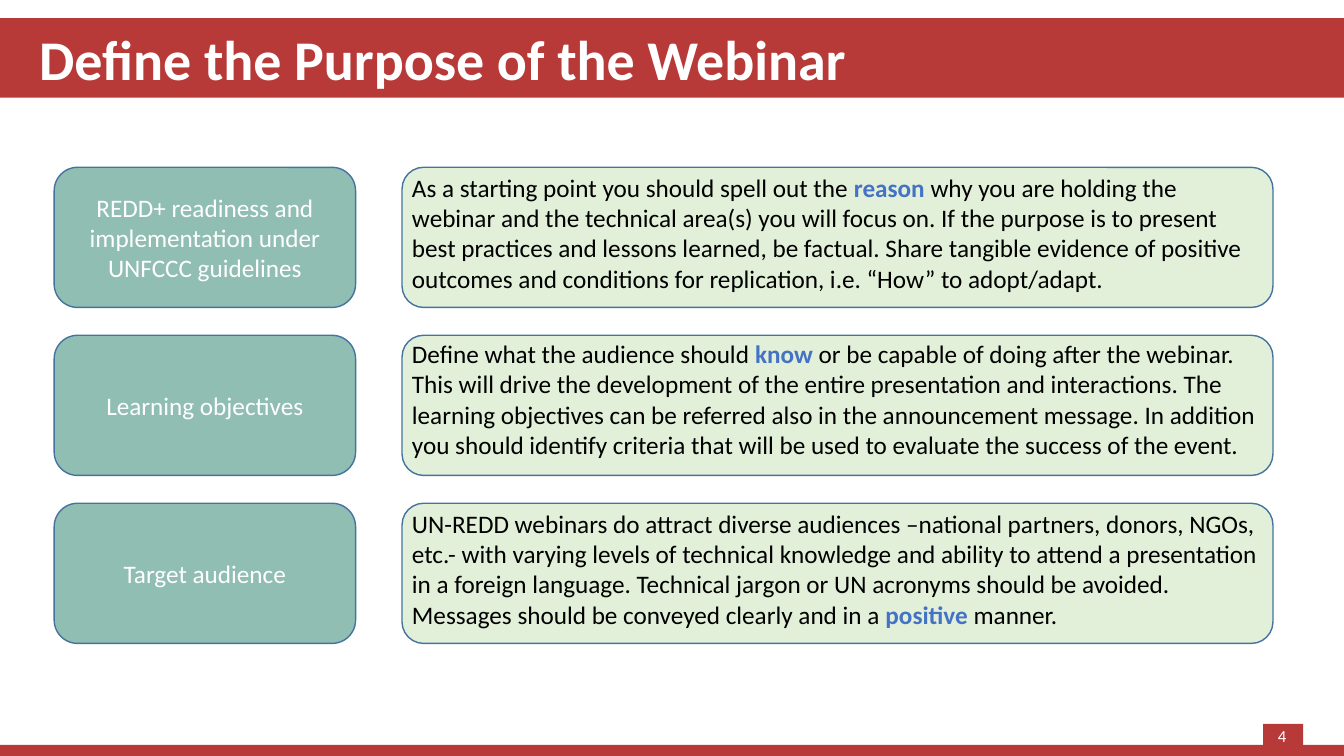
from pptx import Presentation
from pptx.dml.color import RGBColor
from pptx.enum import shapes, text
from pptx.util import Pt

COLORS = {
    "banner": "B83A38",
    "topic": "90BEB2",
    "detail": "E2F0D9",
    "outline": "43739E",
    "keyword": "4472C4",
    "light": "FFFFFF",
    "dark": "000000",
}
FONT = "Calibri"
SLIDE_W, SLIDE_H = 960, 540
ROW_TOP, ROW_PITCH, ROW_H = 119.5, 120, 100.1
TOPIC_LEFT, TOPIC_W = 38.7, 215.3
DETAIL_LEFT, DETAIL_W = 287.2, 622.1

# Topic, text top offset, then text before the keyword, the keyword, text after it
ROWS = [
    ("REDD+ readiness and implementation under UNFCCC guidelines", 0,
     "As a starting point you should spell out the ", "reason ",
     "why you are holding the webinar and the technical area(s) you will focus on. "
     "If the purpose is to present best practices and lessons learned, be factual. "
     "Share tangible evidence of positive outcomes and conditions for replication, "
     "i.e. “How” to adopt/adapt."),
    ("Learning objectives", -1.2,
     "Define what the audience should ", "know ",
     "or be capable of doing after the webinar. This will drive the development of "
     "the entire presentation and interactions. The learning objectives can be "
     "referred also in the announcement message. In addition you should identify "
     "criteria that will be used to evaluate the success of the event."),
    ("Target audience", 0,
     "UN-REDD webinars do attract diverse audiences –national partners, donors, NGOs, "
     "etc.- with varying levels of technical knowledge and ability to attend a "
     "presentation in a foreign language. Technical jargon or UN acronyms should be "
     "avoided. Messages should be conveyed clearly and in a ", "positive", " manner."),
]


def rgb(name):
    return RGBColor.from_string(COLORS[name])


def paint(shape, name):
    shape.fill.solid()
    shape.fill.fore_color.rgb = rgb(name)


def style(paragraph, size, color, align, bold=False):
    font = paragraph.font
    font.name, font.size, font.bold = FONT, Pt(size), bold
    font.color.rgb = rgb(color)
    paragraph.alignment = align


def add_title(slide, wording):
    title = slide.shapes.title
    title.left, title.top, title.width, title.height = Pt(0), Pt(13), Pt(SLIDE_W), Pt(56.7)
    paint(title, "banner")
    frame = title.text_frame
    frame.text = wording
    frame.auto_size = text.MSO_AUTO_SIZE.NONE
    frame.vertical_anchor = text.MSO_ANCHOR.MIDDLE
    frame.margin_left = Pt(28)
    frame.margin_top = frame.margin_right = frame.margin_bottom = 0
    style(frame.paragraphs[0], 40, "light", text.PP_ALIGN.LEFT, bold=True)


def add_bar(slide, left, top, width, height):
    bar = slide.shapes.add_shape(
        shapes.MSO_SHAPE.RECTANGLE, Pt(left), Pt(top), Pt(width), Pt(height))
    bar.shadow.inherit = False
    paint(bar, "banner")
    bar.line.fill.background()


def add_card(slide, left, top, width, color, rounding):
    card = slide.shapes.add_shape(
        shapes.MSO_SHAPE.ROUNDED_RECTANGLE, Pt(left), Pt(top), Pt(width), Pt(ROW_H))
    card.adjustments[0] = rounding
    card.shadow.inherit = False
    paint(card, color)
    card.line.color.rgb = rgb("outline")
    card.line.width = Pt(1)
    return card


def add_topic(slide, top, wording):
    frame = add_card(slide, TOPIC_LEFT, top, TOPIC_W, "topic", 0.167).text_frame
    frame.text = wording
    frame.word_wrap = True
    frame.vertical_anchor = text.MSO_ANCHOR.MIDDLE
    style(frame.paragraphs[0], 18, "light", text.PP_ALIGN.CENTER)


def add_text(slide, left, top, width, height):
    frame = slide.shapes.add_textbox(Pt(left), Pt(top), Pt(width), Pt(height)).text_frame
    frame.word_wrap = True
    return frame


def add_detail(slide, top, offset, before, keyword, after):
    add_card(slide, DETAIL_LEFT, top, DETAIL_W, "detail", 0.154)
    frame = add_text(slide, DETAIL_LEFT, top + offset, DETAIL_W, 94.5)
    frame.auto_size = text.MSO_AUTO_SIZE.SHAPE_TO_FIT_TEXT
    paragraph = frame.paragraphs[0]
    style(paragraph, 18, "dark", text.PP_ALIGN.LEFT)
    for wording in (before, keyword, after):
        run = paragraph.add_run()
        run.text = wording
        if wording == keyword:
            run.font.bold = True
            run.font.color.rgb = rgb("keyword")


def add_page_number(slide, number):
    add_bar(slide, 902.3, 517, 28.6, 16.5)
    frame = add_text(slide, 903.6, 515.5, 22.3, 20.2)
    frame.text = number
    frame.vertical_anchor = text.MSO_ANCHOR.MIDDLE
    style(frame.paragraphs[0], 12, "light", text.PP_ALIGN.RIGHT)


def main():
    deck = Presentation()
    deck.slide_width, deck.slide_height = Pt(SLIDE_W), Pt(SLIDE_H)
    slide = deck.slides.add_slide(deck.slide_layouts[5])

    # Banner and footer
    add_title(slide, "Define the Purpose of the Webinar")
    add_bar(slide, 0, 532, SLIDE_W, 8)
    add_page_number(slide, "4")

    # One row per topic
    for index, (topic, offset, *detail) in enumerate(ROWS):
        top = ROW_TOP + index * ROW_PITCH
        add_topic(slide, top, topic)
        add_detail(slide, top, offset, *detail)

    deck.save("out.pptx")


if __name__ == "__main__":
    main()
